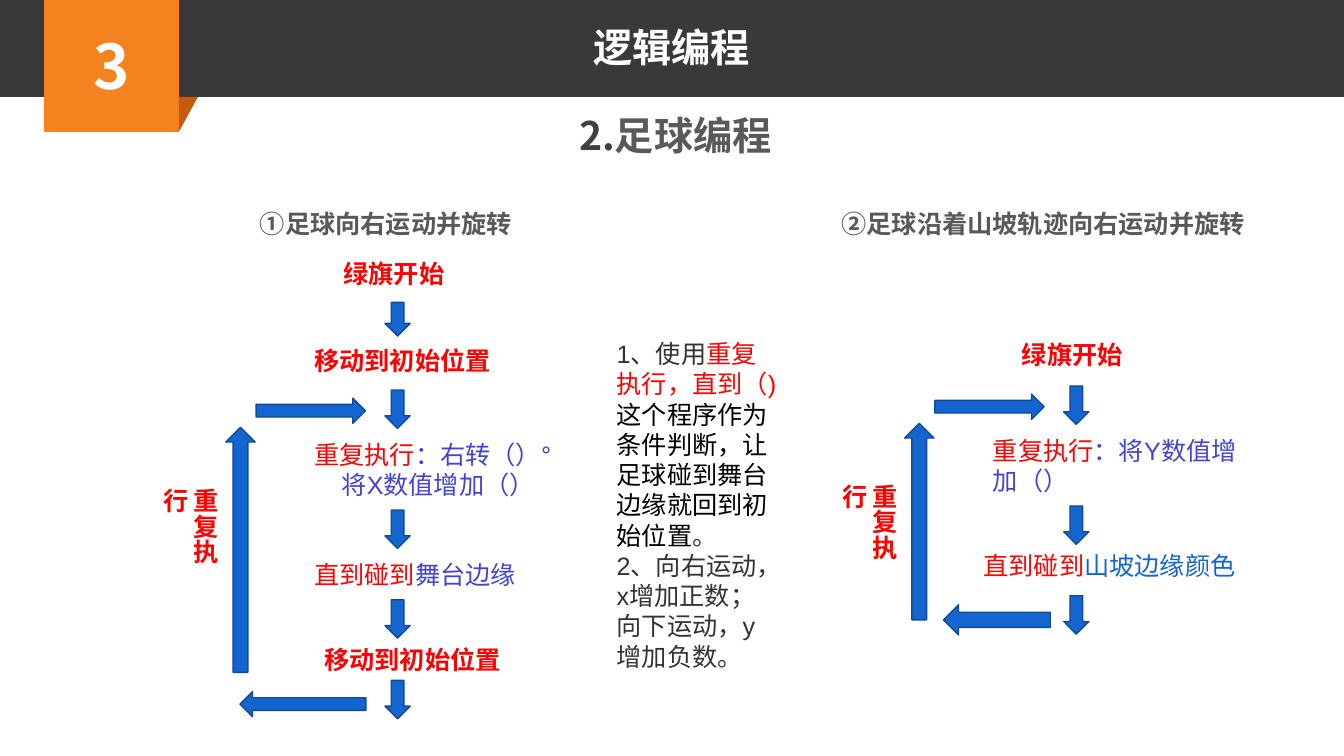
from pptx import Presentation
from pptx.dml.color import RGBColor
from pptx.enum.shapes import MSO_SHAPE
from pptx.enum.text import MSO_ANCHOR, MSO_AUTO_SIZE, PP_ALIGN
from pptx.oxml.ns import qn
from pptx.util import Pt
from lxml.etree import SubElement

COLORS = {
    "bar": "3A3838", "orange": "F5821F", "fold": "C55A11", "white": "FFFFFF",
    "number": "404040", "title": "595959", "red": "FF0000", "violet": "4444D2",
    "blue": "1465CF", "edge": "0F4B99", "body": "333333", "black": "000000",
}
HEAD, BODY = "Noto Sans CJK SC", "Arial"


class Deck:
    def __init__(self, width, height):
        self.prs = Presentation()
        self.prs.slide_width, self.prs.slide_height = Pt(width), Pt(height)
        self.s = self.prs.slides.add_slide(self.prs.slide_layouts[6])

    def color(self, name):
        return RGBColor.from_string(COLORS[name])

    def shape(self, kind, x, y, w, h, fill, line=None):
        sp = self.s.shapes.add_shape(kind, Pt(x), Pt(y), Pt(w), Pt(h))
        sp.shadow.inherit = False
        sp.fill.solid()
        sp.fill.fore_color.rgb = self.color(fill)
        if line:
            sp.line.color.rgb = self.color(line)
            sp.line.width = Pt(1)
        else:
            sp.line.fill.background()
        return sp

    def arrow(self, kind, x, y, w, h):
        self.shape(kind, x, y, w, h, "blue", "edge")

    def down(self, x, y, h=27.4):
        self.arrow(MSO_SHAPE.DOWN_ARROW, x, y, 18, h)

    def fill_text(self, tf, paragraphs, size, font, bold, align):
        """Fill a frame; each paragraph is a list of (text, colour) runs."""
        for i, runs in enumerate(paragraphs):
            p = tf.paragraphs[0] if i == 0 else tf.add_paragraph()
            p.alignment = align
            for text, color in runs:
                r = p.add_run()
                r.text = text
                r.font.size, r.font.bold, r.font.name = Pt(size), bold, font
                r.font.color.rgb = self.color(color)
                SubElement(r.font._element, qn("a:ea"), typeface=font)

    def text(self, x, y, w, h, *paragraphs, size=18, font=BODY, bold=False,
             align=PP_ALIGN.LEFT, vertical=False):
        sp = self.s.shapes.add_textbox(Pt(x), Pt(y), Pt(w), Pt(h))
        tf = sp.text_frame
        tf.word_wrap = True
        tf.auto_size = MSO_AUTO_SIZE.SHAPE_TO_FIT_TEXT
        if vertical:
            tf._txBody.bodyPr.set("vert", "eaVert")
        self.fill_text(tf, paragraphs, size, font, bold, align)
        return tf

    def step(self, x, y, w, label):
        self.text(x, y, w, 29, [(label, "red")], bold=True)

    def heading(self, x, y, w, *runs, size=28, align=PP_ALIGN.CENTER):
        self.text(x, y, w, size * 1.2 + 7.4, list(runs), size=size, font=HEAD,
                  bold=True, align=align)

    def loop(self, dx, dy, rise, action, until_at, until, back):
        """Repeat block: entry, action, condition, way back and rising arrow."""
        self.arrow(MSO_SHAPE.RIGHT_ARROW, 183 + dx, 284.4 + dy, 78, 18)
        self.arrow(MSO_SHAPE.UP_ARROW, 161.3 + dx, 305.3 + dy, 21, rise)
        self.arrow(MSO_SHAPE.LEFT_ARROW, *back)
        for y in (278.6, 364.3, 428.4):
            self.down(275 + dx, y + dy)
        self.text(125.3 + dx, 342 + dy, 36, 82.8, [("重复执行", "red")],
                  bold=True, vertical=True)
        tf = self.text(217.4 + dx, 310.3 + dy, 190.8, 51, *action)
        self.text(*until_at, 200, 29, [("直到碰到", "red"), until])
        return tf


def main():
    d = Deck(960, 540)

    d.shape(MSO_SHAPE.RECTANGLE, 0, -2, 960, 71.3, "bar")
    badge = d.shape(MSO_SHAPE.RECTANGLE, 31.5, -2, 96.3, 96.3, "orange")
    badge.text_frame.vertical_anchor = MSO_ANCHOR.MIDDLE
    d.fill_text(badge.text_frame, [[("3", "white")]], 44, HEAD, True,
                PP_ALIGN.CENTER)
    fold = d.shape(MSO_SHAPE.RIGHT_TRIANGLE, 127.7, 69.3, 13.7, 25, "fold")
    fold._element.spPr.xfrm.set("flipV", "1")

    d.heading(322.5, 13, 314.6, ("逻辑编程", "white"))
    d.heading(318.2, 76.3, 328.3, ("2.", "number"), ("足球编程", "title"))
    for x, w, label in ((178.6, 294.5, "①足球向右运动并旋转"),
                        (594, 314, "②足球沿着山坡轨迹向右运动并旋转")):
        d.heading(x, 145.4, w, (label, "title"), size=18, align=PP_ALIGN.LEFT)

    d.step(238.3, 180.7, 91.4, "绿旗开始")
    d.down(275, 216, 24)
    d.step(217.4, 243.4, 205.2, "移动到初始位置")
    tf = d.loop(0, 0, 175,
                [[("重复执行", "red"), ("：右转（）°", "violet")],
                 [("将X数值增加（）", "violet")]],
                (217.4, 396), ("舞台边缘", "violet"), (171.4, 493.9, 90, 18))
    tf.paragraphs[1]._p.get_or_add_pPr().set("marL", str(Pt(19.5)))
    d.step(224.6, 456.5, 205.2, "移动到初始位置")
    d.down(275, 486)

    d.text(433.4, 238.3, 128.9, 268.6,
           [("1、使用", "body"), ("重复执行，直到（)", "red"),
            ("这个程序作为条件判断，让足球碰到舞台边缘就回到初始位置", "black"),
            ("。", "body")],
           [("2、向右运动，x增加正数；向下运动，y增加负数。", "body")])

    d.step(722.9, 239, 91.4, "绿旗开始")
    d.loop(484.8, -2.9, 140.4,
           [[("重复执行", "red"), ("：将Y数值增加（）", "violet")]],
           (695.5, 389.5), ("山坡边缘颜色", "blue"), (673.9, 432, 76.3, 21.6))

    d.prs.save("out.pptx")


if __name__ == "__main__":
    main()
